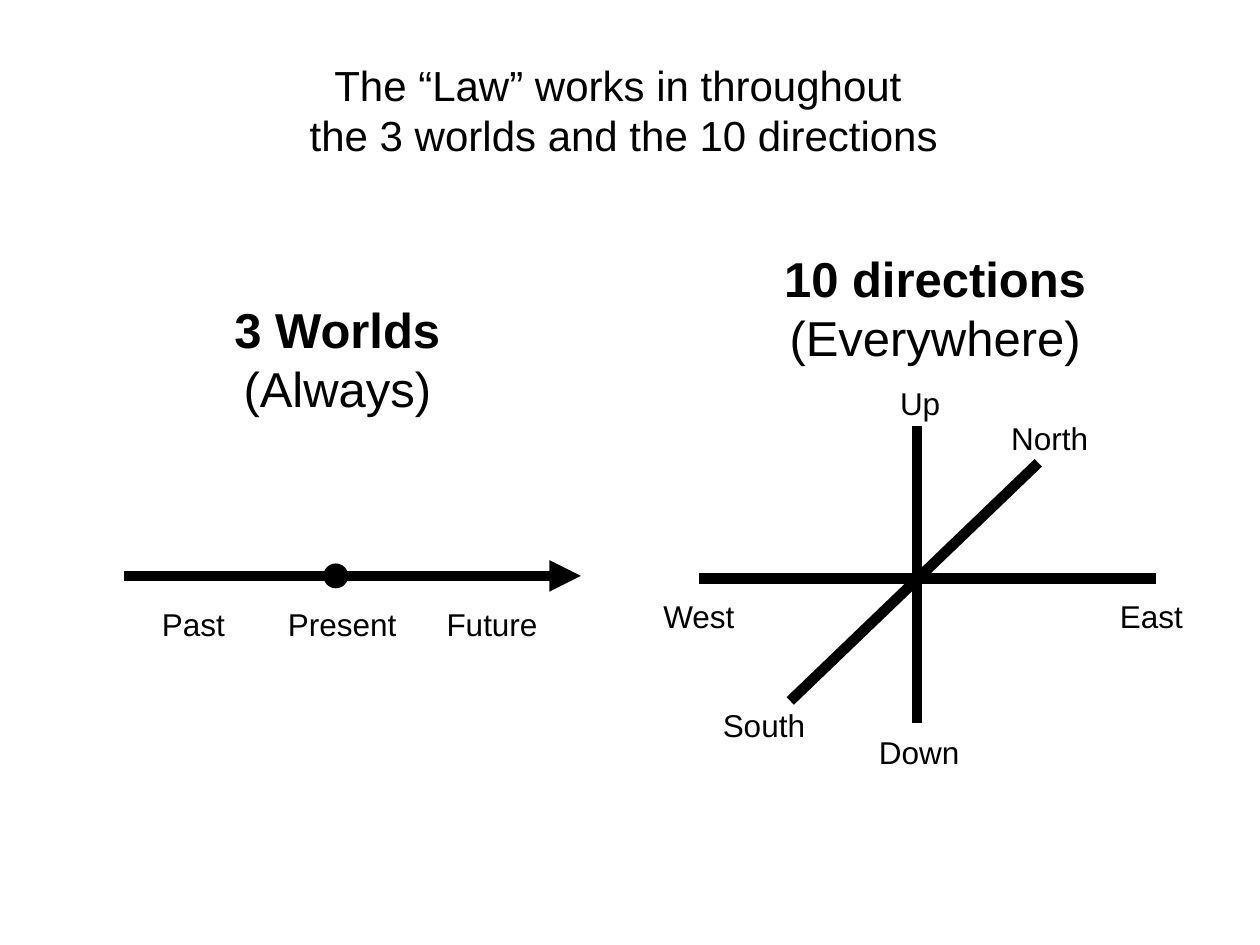
from lxml.etree import SubElement
from pptx import Presentation
from pptx.dml.color import RGBColor
from pptx.enum.shapes import MSO_CONNECTOR, MSO_SHAPE
from pptx.enum.text import MSO_ANCHOR, MSO_AUTO_SIZE, PP_ALIGN
from pptx.oxml.ns import qn
from pptx.util import Cm, Pt

BLACK = RGBColor(0x00, 0x00, 0x00)
WHITE = RGBColor(0xFF, 0xFF, 0xFF)
FONT = "Arial"
LABEL_HEIGHT = 1.02
HEADING_HEIGHT = 2.64


def write_text(frame, lines, size=18, bold_first=False, wrap=False):
    """Fill a text frame with centred lines, the first one bold on request."""
    frame.auto_size = MSO_AUTO_SIZE.NONE
    frame.word_wrap = wrap
    frame.vertical_anchor = MSO_ANCHOR.TOP
    for index, line in enumerate(lines):
        paragraph = frame.paragraphs[0] if index == 0 else frame.add_paragraph()
        paragraph.alignment = PP_ALIGN.CENTER
        paragraph.line_spacing = 1.0
        paragraph.space_before = Pt(0)
        run = paragraph.add_run()
        run.text = line
        run.font.name = FONT
        run.font.size = Pt(size)
        run.font.bold = bold_first and index == 0
        run.font.color.rgb = BLACK


def add_text(slide, center, top, width, height, lines, **style):
    """Add a text box centred on a horizontal position."""
    box = slide.shapes.add_textbox(
        Cm(center - width / 2), Cm(top), Cm(width), Cm(height))
    write_text(box.text_frame, lines, **style)


def add_axis(slide, start, end, arrow=False):
    """Draw a thick straight axis, with an arrowhead at its end on request."""
    axis = slide.shapes.add_connector(
        MSO_CONNECTOR.STRAIGHT, *(Cm(length) for length in (*start, *end)))
    axis.line.color.rgb = BLACK
    axis.line.width = Pt(6)
    if arrow:
        SubElement(axis.line._get_or_add_ln(), qn("a:tailEnd"), type="triangle")
    SubElement(axis._element.spPr, qn("a:effectLst"))


def add_title(slide, left, top, width, height):
    """Place the slide title in its placeholder."""
    title = slide.shapes.title
    title.left, title.top = Cm(left), Cm(top)
    title.width, title.height = Cm(width), Cm(height)
    lines = ["The “Law” works in throughout ", "the 3 worlds and the 10 directions"]
    write_text(title.text_frame, lines, size=24, wrap=True)


def add_worlds(slide, left, top, width):
    """Draw the timeline of the three worlds under its heading."""
    add_text(slide, left + 4.31, top, 4.7, HEADING_HEIGHT,
             ["3 Worlds", "(Always)"], size=28, bold_first=True)
    axis_y = top + 5.69
    add_axis(slide, (left, axis_y), (left + width, axis_y), arrow=True)

    diameter = 0.43
    present = slide.shapes.add_shape(
        MSO_SHAPE.OVAL, Cm(left + 4.28 - diameter / 2), Cm(axis_y - diameter / 2),
        Cm(diameter), Cm(diameter))
    present.shadow.inherit = False
    present.fill.solid()
    present.fill.fore_color.rgb = BLACK
    present.line.color.rgb = BLACK
    present.line.width = Pt(2)

    for world, center, label_width in (
            ("Past", 1.41, 1.8), ("Present", 4.41, 2.72), ("Future", 7.43, 2.36)):
        add_text(slide, left + center, axis_y + 0.46, label_width, LABEL_HEIGHT, [world])


def add_directions(slide, left, top):
    """Draw the crossing axes of the directions under their heading."""
    add_text(slide, left + 5.74, top, 7.62, HEADING_HEIGHT,
             ["10 directions", "(Everywhere)"], size=28, bold_first=True, wrap=True)
    for (x1, y1), (x2, y2) in (
            ((0.99, 6.78), (10.19, 6.78)),
            ((5.38, 3.71), (5.38, 9.7)),
            ((2.82, 9.25), (7.82, 4.45))):
        add_axis(slide, (left + x1, top + y1), (left + x2, top + y2))
    for direction, center, label_top, label_width in (
            ("Up", 5.44, 2.74, 1.32), ("Down", 5.42, 9.78, 2.16),
            ("North", 8.05, 3.45, 2.08), ("South", 2.29, 9.22, 2.18),
            ("West", 0.98, 7.04, 1.96), ("East", 10.1, 7.04, 1.8)):
        add_text(slide, left + center, top + label_top, label_width,
                 LABEL_HEIGHT, [direction])


def main():
    """Build and save the slide."""
    presentation = Presentation()
    presentation.slide_width, presentation.slide_height = Cm(25.4), Cm(19.05)
    slide = presentation.slides.add_slide(presentation.slide_layouts[5])
    slide.background.fill.solid()
    slide.background.fill.fore_color.rgb = WHITE
    add_title(slide, 1.27, 1.07, 22.61, 2.31)
    add_worlds(slide, 2.49, 5.92, 9.22)
    add_directions(slide, 13.11, 4.88)
    presentation.save("out.pptx")


if __name__ == "__main__":
    main()
